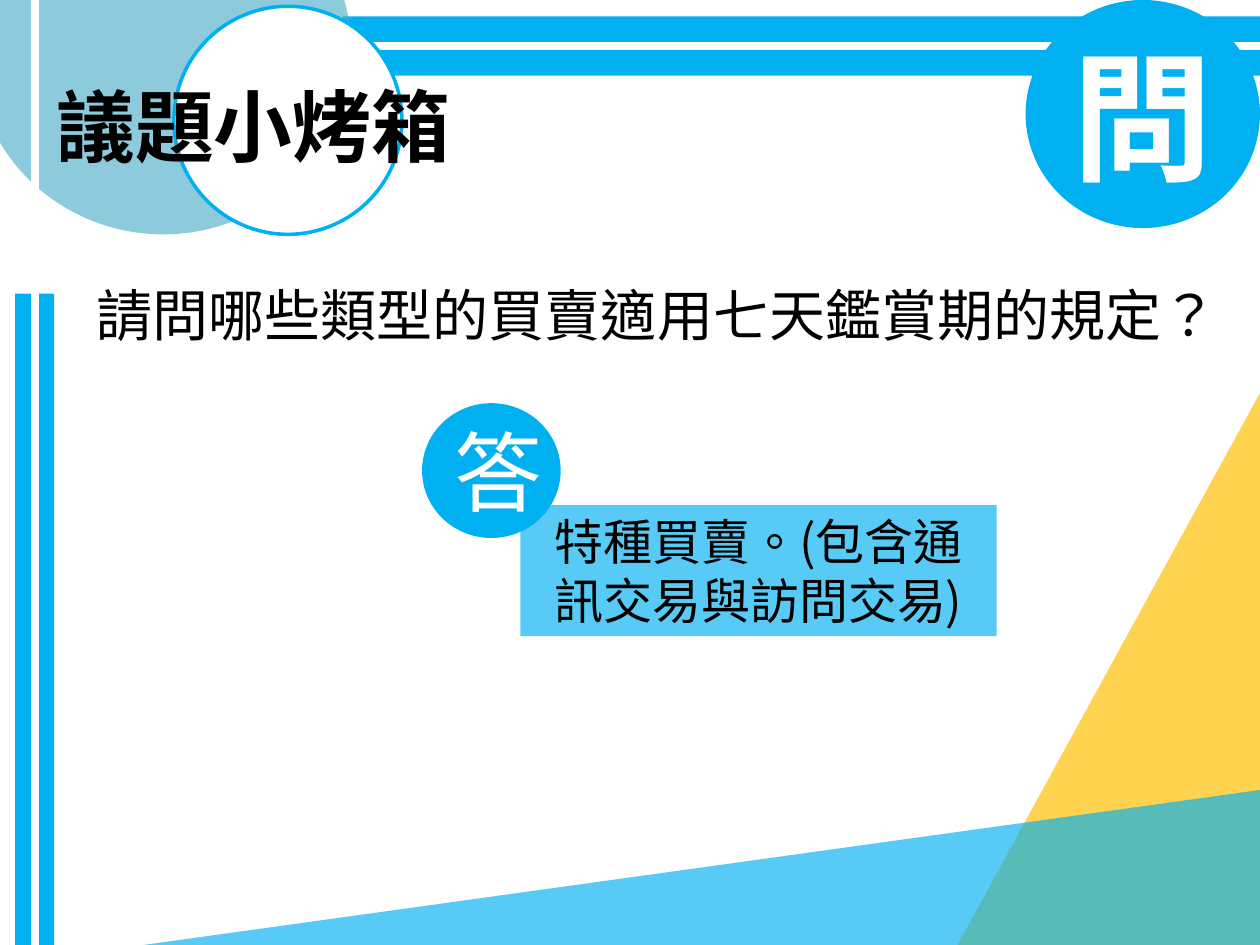
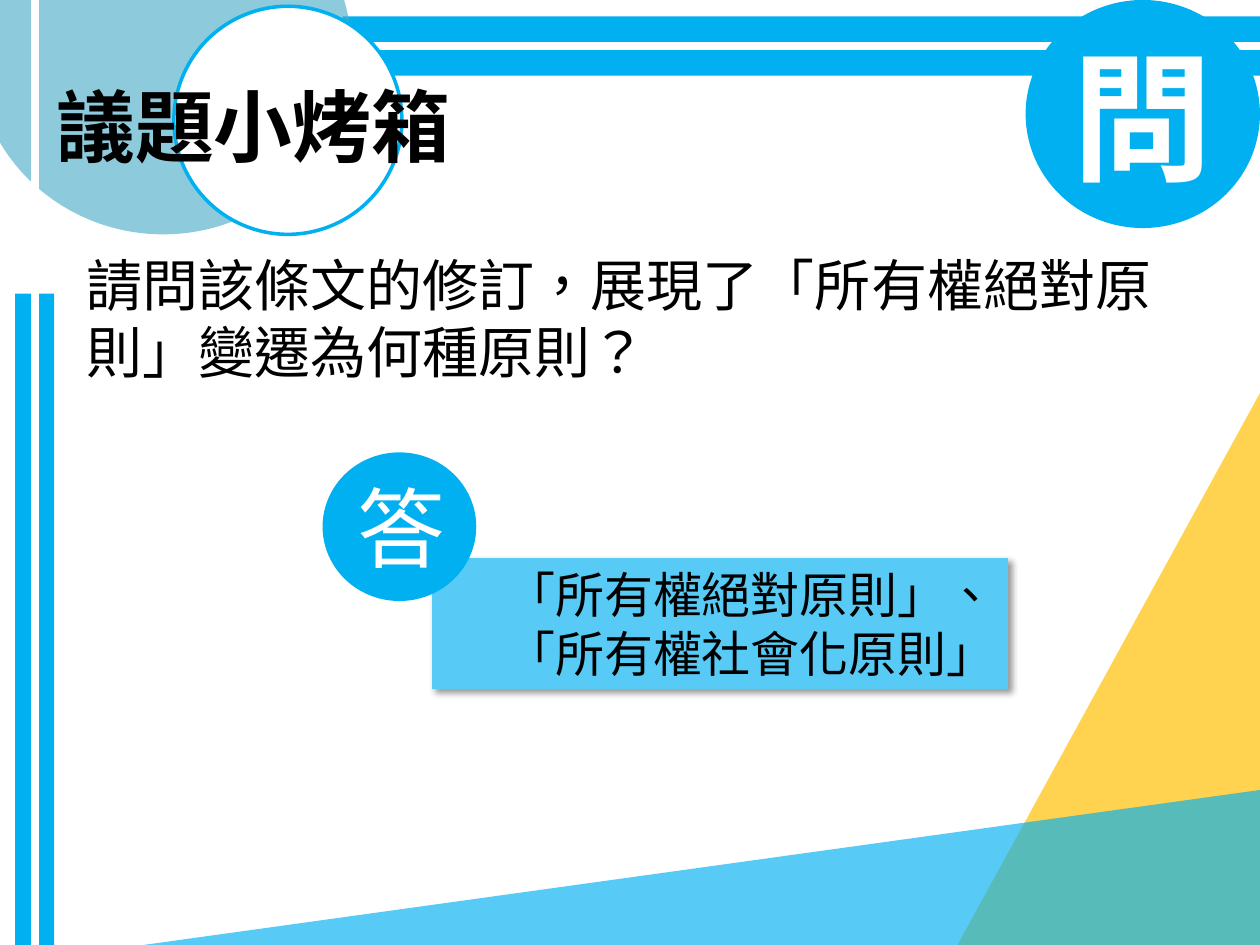
import pptx
import pptx.util
import pptx.dml.color
import pptx.enum.shapes
import pptx.enum.text
import pptx.oxml
import pptx.oxml.ns
from lxml import etree

Inches = pptx.util.Inches
SHAPE = pptx.enum.shapes.MSO_SHAPE
ALIGN = pptx.enum.text.PP_ALIGN
ANCHOR = pptx.enum.text.MSO_ANCHOR
qn = pptx.oxml.ns.qn

WIDTH, HEIGHT = 10, 7.5
FONT = "Noto Sans CJK SC"
SKY, PALE_SKY, TEAL, AMBER = "00B0F0", "57CBF5", "4BACC6", "FFC000"
WHITE, BLACK = "FFFFFF", "000000"

HEADER_BAND = (2.72, 0.13, 7.28, 0.47)
QUESTION_BADGE = (8.14, 0, 1.86, 1.81)
TITLE_CIRCLES = (-0.2, -1.05, 3.39, 2.91)
SIDE_BAND = (0.12, 2.33, 0.31, 5.17)
CORNER = (1.14, 3.12, 8.86, 4.38)
TITLE = (0.28, 0.37, 3.46, 1.25)

QUESTIONS = [
    dict(
        question="請問哪些類型的買賣適用七天鑑賞期的規定？",
        question_box=(0.67, 2.18, 9.2, 0.94),
        answer="特種買賣。(包含通訊交易與訪問交易)",
        answer_box=(3.35, 3.2, 4.56, 1.85),
        badge_size=(1.1, 1.07),
        panel_offset=(0.78, 0.81),
        align=ALIGN.CENTER,
        shadow=False,
    ),
    dict(
        question="請問該條文的修訂，展現了「所有權絕對原則」變遷為何種原則？",
        question_box=(0.59, 1.94, 8.91, 1.81),
        answer="「所有權絕對原則」、 「所有權社會化原則」",
        answer_box=(2.56, 3.59, 5.44, 1.88),
        badge_size=(1.22, 1.18),
        panel_offset=(0.87, 0.84),
        align=ALIGN.RIGHT,
        shadow=True,
    ),
]


def rgb(color):
    return pptx.dml.color.RGBColor.from_string(color)


def add_filled(slide, preset, box, color, opacity=100, outline=None):
    shape = slide.shapes.add_shape(preset, *map(Inches, box))
    shape.shadow.inherit = False
    shape.fill.solid()
    shape.fill.fore_color.rgb = rgb(color)
    if opacity < 100:
        tint = shape.fill._xPr.find(qn("a:solidFill"))[0]
        etree.SubElement(tint, qn("a:alpha"), val=str(opacity * 1000))
    if outline:
        shape.line.color.rgb = rgb(outline)
        shape.line.width = pptx.util.Pt(2)
    else:
        shape.line.fill.background()
    return shape


def add_white_stripe(slide, start, end):
    stripe = slide.shapes.add_connector(
        pptx.enum.shapes.MSO_CONNECTOR.STRAIGHT, *map(Inches, start + end))
    stripe.line.color.rgb = rgb(WHITE)
    stripe.line.width = pptx.util.Pt(4.5)
    etree.SubElement(stripe._element.spPr, qn("a:effectLst"))


def write(shape, text, size, color=BLACK, align=ALIGN.CENTER,
          anchor=ANCHOR.MIDDLE, bold=False):
    frame = shape.text_frame
    frame.text = text
    frame.word_wrap = True
    frame.vertical_anchor = anchor
    paragraph = frame.paragraphs[0]
    paragraph.alignment = align
    run = paragraph.runs[0]
    run.font.size = pptx.util.Pt(size)
    run.font.bold = bold
    run.font.color.rgb = rgb(color)
    run.font.name = FONT
    properties = run._r.get_or_add_rPr()
    properties.set("lang", "zh-TW")
    etree.SubElement(properties, qn("a:ea"), typeface=FONT)


def cast_shadow(shape):
    effects = shape._element.spPr.find(qn("a:effectLst"))
    shadow = etree.SubElement(
        effects, qn("a:outerShdw"), blurRad=str(pptx.util.Pt(4)),
        dist=str(pptx.util.Pt(3)), dir=str(45 * 60000), algn="tl", rotWithShape="0")
    tint = etree.SubElement(shadow, qn("a:srgbClr"), val=BLACK)
    etree.SubElement(tint, qn("a:alpha"), val="40000")


def draw_header_band(slide, box):
    left, top, width, height = box
    add_filled(slide, SHAPE.RECTANGLE, box, SKY)
    middle = top + height / 2
    add_white_stripe(slide, (left + width, middle), (left - 0.08, middle))


def draw_question_badge(slide, box):
    badge = add_filled(slide, SHAPE.OVAL, box, SKY)
    write(badge, "問", 80, WHITE, bold=True)


def draw_title_circles(slide, box):
    left, top, width, height = box
    ring = 1.81
    add_filled(slide, SHAPE.OVAL, (left, top, 2.99, height), TEAL, opacity=63)
    add_filled(slide, SHAPE.OVAL,
               (left + width - ring, top + height - ring, ring, ring),
               WHITE, outline=SKY)


def draw_side_band(slide, box):
    left, top, width, height = box
    add_filled(slide, SHAPE.RECTANGLE, box, SKY)
    middle = left + width / 2
    add_white_stripe(slide, (middle, top + height), (middle, 0))


def draw_corner(slide, box):
    left, top, width, height = box
    for wedge_width, wedge_height, color, opacity in (
            (2.4, height, AMBER, 69), (width, 1.23, SKY, 66)):
        wedge_box = (left + width - wedge_width, top + height - wedge_height,
                     wedge_width, wedge_height)
        wedge = add_filled(slide, SHAPE.RIGHT_TRIANGLE, wedge_box, color, opacity)
        wedge._element.spPr.find(qn("a:xfrm")).set("flipH", "1")


def draw_title(slide, box):
    title = slide.shapes.add_textbox(*map(Inches, box))
    write(title, "議題小烤箱", 45, bold=True)


def draw_question(slide, box, text):
    question = slide.shapes.add_textbox(*map(Inches, box))
    write(question, text, 32, align=ALIGN.LEFT, anchor=ANCHOR.TOP)


def draw_answer(slide, box, text, badge_size, panel_offset, align, shadow):
    left, top, width, height = box
    shift_x, shift_y = panel_offset
    panel = add_filled(
        slide, SHAPE.RECTANGLE,
        (left + shift_x, top + shift_y, width - shift_x, height - shift_y), PALE_SKY)
    write(panel, text, 28, align=align, anchor=ANCHOR.TOP)
    if shadow:
        cast_shadow(panel)
    badge = add_filled(slide, SHAPE.OVAL, (left, top) + badge_size, SKY)
    write(badge, "答", 50, WHITE)


def draw_backdrop(slide):
    draw_header_band(slide, HEADER_BAND)
    draw_question_badge(slide, QUESTION_BADGE)
    draw_title_circles(slide, TITLE_CIRCLES)
    draw_side_band(slide, SIDE_BAND)
    draw_corner(slide, CORNER)
    draw_title(slide, TITLE)


def main():
    deck = pptx.Presentation()
    deck.slide_width, deck.slide_height = Inches(WIDTH), Inches(HEIGHT)
    for item in QUESTIONS:
        slide = deck.slides.add_slide(deck.slide_layouts[6])
        draw_backdrop(slide)
        draw_question(slide, item["question_box"], item["question"])
        draw_answer(slide, item["answer_box"], item["answer"], item["badge_size"],
                    item["panel_offset"], item["align"], item["shadow"])
    deck.save("out.pptx")


if __name__ == "__main__":
    main()
